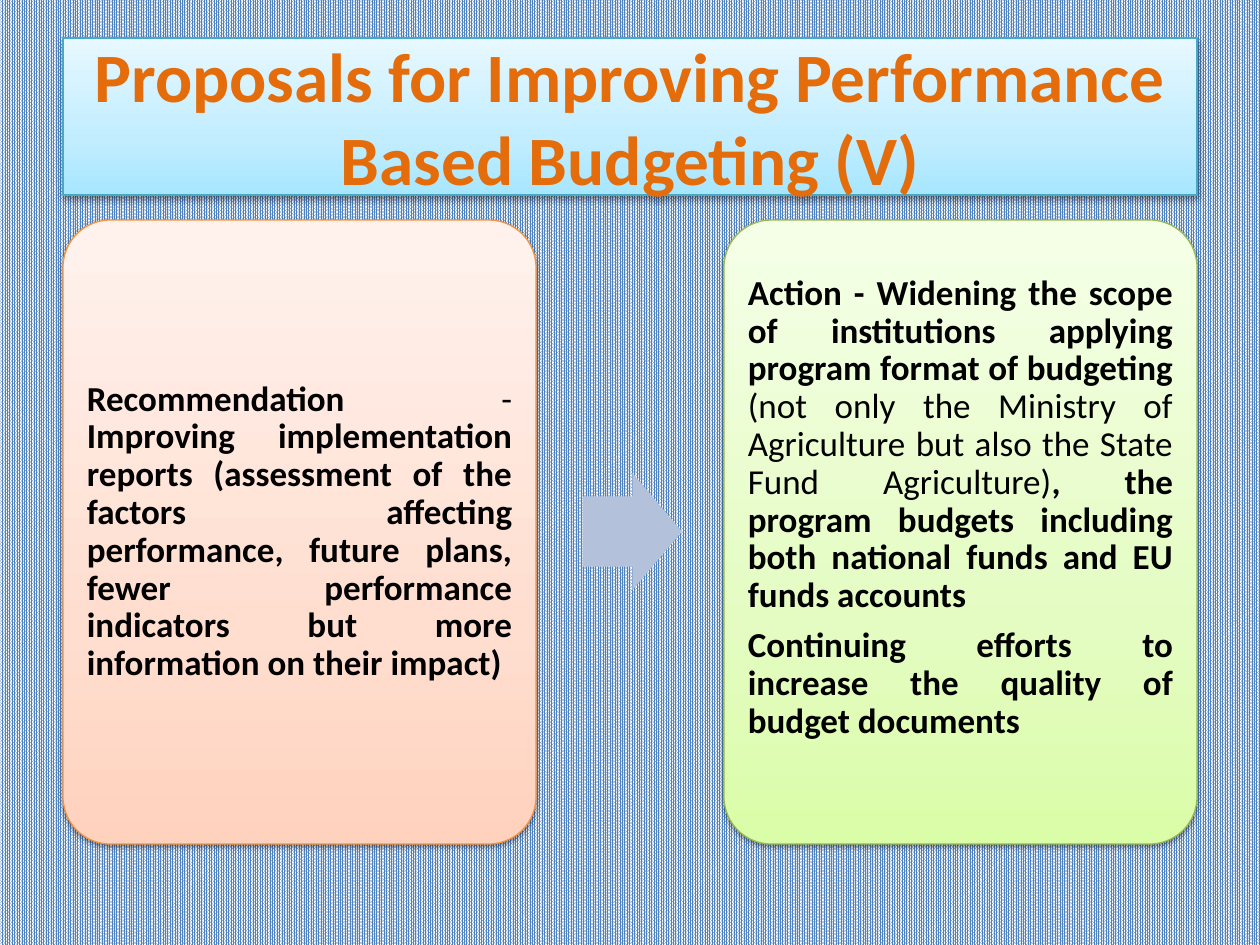
from copy import deepcopy

from lxml import etree
from pptx import Presentation
from pptx.dml.color import RGBColor
from pptx.enum.dml import MSO_PATTERN
from pptx.enum.shapes import MSO_SHAPE
from pptx.enum.text import MSO_ANCHOR, MSO_AUTO_SIZE, PP_ALIGN
from pptx.oxml.ns import qn
from pptx.util import Emu, Pt

PERCENT_90 = MSO_PATTERN.PERCENT_90
ROUNDED, ARROW = MSO_SHAPE.ROUNDED_RECTANGLE, MSO_SHAPE.RIGHT_ARROW
MIDDLE, NO_FIT = MSO_ANCHOR.MIDDLE, MSO_AUTO_SIZE.NONE
CENTER, JUSTIFY = PP_ALIGN.CENTER, PP_ALIGN.JUSTIFY

PX = 914400 // 126
FONT = "Calibri"
BLACK = RGBColor(0x00, 0x00, 0x00)
WHITE = RGBColor(0xFF, 0xFF, 0xFF)
BLUE = RGBColor(0x4F, 0x81, 0xBD)
ORANGE = RGBColor(0xE4, 0x6C, 0x0A)
ARROW_BLUE = RGBColor(0xB3, 0xC1, 0xDB)

# Line colour, then gradient colours from bottom to top
AQUA_STYLE = (RGBColor(0x46, 0xAA, 0xC5), (RGBColor(0xA7, 0xE6, 0xFF),
              RGBColor(0xC1, 0xED, 0xFF), RGBColor(0xE7, 0xF8, 0xFF)))
PEACH_STYLE = (RGBColor(0xF6, 0x92, 0x40), (RGBColor(0xFF, 0xD2, 0xBD),
               RGBColor(0xFF, 0xDE, 0xD0), RGBColor(0xFF, 0xF2, 0xED)))
GREEN_STYLE = (RGBColor(0x98, 0xB9, 0x55), (RGBColor(0xDA, 0xFD, 0xA7),
               RGBColor(0xE4, 0xFC, 0xC2), RGBColor(0xF5, 0xFF, 0xE7)))
STOP_POSITIONS = (0, 0.35, 1)

# Content: each paragraph is a list of (text, bold) runs
TITLE = "Proposals for Improving Performance Based Budgeting (V)"
RECOMMENDATION = [
    [("Recommendation ", True), ("- ", False),
     ("Improving implementation reports (assessment of the factors affecting "
      "performance, future plans, fewer performance indicators but more "
      "information on their impact)", True)],
]
ACTION = [
    [("Action - Widening the scope of institutions applying program format "
      "of budgeting ", True),
     ("(not only the Ministry of Agriculture but also the State Fund "
      "Agriculture)", False),
     (", the program budgets including both national funds and EU funds "
      "accounts", True)],
    [("Continuing efforts to increase the quality of budget documents", True)],
]
# Paragraphs, style and bottom inset in px
CARDS = [(RECOMMENDATION, PEACH_STYLE, 10), (ACTION, GREEN_STYLE, 58)]

# Layout in px
SLIDE_WIDTH, SLIDE_HEIGHT = 1260, 945
MARGIN = 63
TITLE_TOP, TITLE_HEIGHT = 38, 157
CARD_TOP, CARD_WIDTH, CARD_HEIGHT = 220, 473, 624
ARROW_WIDTH, ARROW_HEIGHT = 99, 117
CARD_STEP = SLIDE_WIDTH - 2 * MARGIN - CARD_WIDTH
INSET = 10


def px(*lengths):
    return [Emu(length * PX) for length in lengths]


def set_values(target, values):
    for name, value in values.items():
        setattr(target, name, value)


def style_panel(shape, style):
    line_color, colors = style
    shape.fill.gradient()
    shape.fill.gradient_angle = 90
    stop_list = shape._element.spPr.find(qn("a:gradFill")).find(qn("a:gsLst"))
    stop_list.append(deepcopy(stop_list[0]))
    for stop, position, color in zip(shape.fill.gradient_stops, STOP_POSITIONS, colors):
        stop.position = position
        stop.color.rgb = color
    shape.line.color.rgb = line_color
    shape.line.width = Pt(0.75)

    # Soft shadow straight below
    shape.shadow.inherit = False
    effects = shape._element.spPr.find(qn("a:effectLst"))
    shadow = etree.SubElement(effects, qn("a:outerShdw"), blurRad=str(Pt(3.1)),
                              dist=str(Pt(1.6)), dir="5400000", rotWithShape="0")
    color = etree.SubElement(shadow, qn("a:srgbClr"), val=str(BLACK))
    etree.SubElement(color, qn("a:alpha"), val="38000")


def add_run(paragraph, text, size, color, bold):
    run = paragraph.add_run()
    run.text = text
    set_values(run.font, {"name": FONT, "size": Pt(size), "bold": bold})
    run.font.color.rgb = color


def add_card(slide, index, paragraphs, style, bottom_inset):
    card = slide.shapes.add_shape(
        ROUNDED, *px(MARGIN + index * CARD_STEP, CARD_TOP, CARD_WIDTH, CARD_HEIGHT))
    card.adjustments[0] = 0.1
    style_panel(card, style)
    frame = card.text_frame
    left, top, right, bottom = px(INSET, INSET, INSET, bottom_inset)
    set_values(frame, {"word_wrap": True, "vertical_anchor": MIDDLE,
                       "margin_left": left, "margin_top": top,
                       "margin_right": right, "margin_bottom": bottom})
    for number, runs in enumerate(paragraphs):
        paragraph = frame.add_paragraph() if number else frame.paragraphs[0]
        set_values(paragraph, {"alignment": JUSTIFY, "line_spacing": 0.9,
                               "space_after": Pt(7)})
        for text, bold in runs:
            add_run(paragraph, text, 20, BLACK, bold)


def main():
    presentation = Presentation()
    presentation.slide_width, presentation.slide_height = px(SLIDE_WIDTH, SLIDE_HEIGHT)
    slide = presentation.slides.add_slide(presentation.slide_layouts[5])

    # Background
    background = slide.background.fill
    background.patterned()
    background.pattern = PERCENT_90
    background.fore_color.rgb = BLUE
    background.back_color.rgb = WHITE

    # Title
    title = slide.shapes.title
    left, top, width, height = px(MARGIN, TITLE_TOP, SLIDE_WIDTH - 2 * MARGIN, TITLE_HEIGHT)
    set_values(title, {"left": left, "top": top, "width": width, "height": height})
    style_panel(title, AQUA_STYLE)
    set_values(title.text_frame, {"word_wrap": True, "vertical_anchor": MIDDLE,
                                  "auto_size": NO_FIT})
    paragraph = title.text_frame.paragraphs[0]
    paragraph.alignment = CENTER
    add_run(paragraph, TITLE, 39.6, ORANGE, True)

    # Cards
    for index, card in enumerate(CARDS):
        add_card(slide, index, *card)

    # Arrow, a tenth of a card's width after the first card
    arrow = slide.shapes.add_shape(ARROW, *px(
        MARGIN + CARD_WIDTH + CARD_WIDTH // 10,
        CARD_TOP + (CARD_HEIGHT - ARROW_HEIGHT) // 2, ARROW_WIDTH, ARROW_HEIGHT))
    arrow.adjustments[0], arrow.adjustments[1] = 0.6, 0.5
    arrow.fill.solid()
    arrow.fill.fore_color.rgb = ARROW_BLUE
    arrow.line.fill.background()
    arrow.shadow.inherit = False

    presentation.save("out.pptx")


if __name__ == "__main__":
    main()
